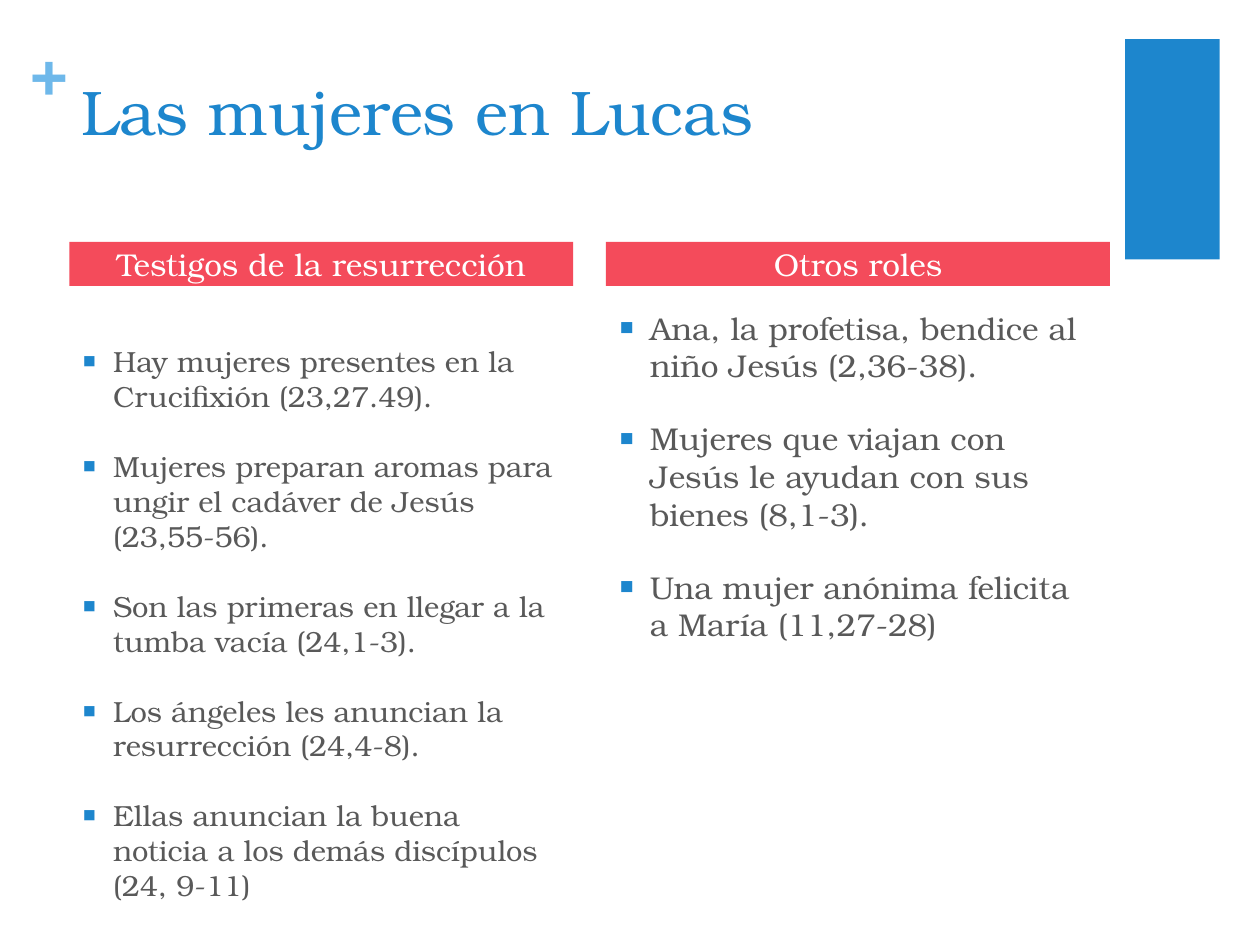
from dataclasses import dataclass

from lxml import etree
from pptx import Presentation
from pptx import util as u
from pptx.dml.color import RGBColor
from pptx.enum import shapes, text
from pptx.oxml import ns


@dataclass(frozen=True)
class Theme:
    font: str = "TeX Gyre Bonum"
    blue: str = "1D86CD"
    light: str = "6EB8EA"
    red: str = "F44B5B"
    gray: str = "595959"
    white: str = "FFFFFF"
    large: float = 36
    base: float = 18
    small: float = 16.6
    gap: float = 20


THEME = Theme()

WITNESS = [
    "Hay mujeres presentes en la Crucifixión (23,27.49).",
    "Mujeres preparan aromas para ungir el cadáver de Jesús (23,55-56).",
    "Son las primeras en llegar a la tumba vacía (24,1-3).",
    "Los ángeles les anuncian la resurrección (24,4-8).",
    "Ellas anuncian la buena noticia a los demás discípulos (24, 9-11)",
]
ROLES = [
    "Ana, la profetisa, bendice al niño Jesús (2,36-38).",
    "Mujeres que viajan con Jesús le ayudan con sus bienes (8,1-3).",
    "Una mujer anónima felicita a María (11,27-28)",
]


def apply(item, values):
    for name, value in values.items():
        setattr(item, name, value)


def style(para, size, color, bold=False):
    apply(para.font, {"name": THEME.font, "size": u.Pt(size), "bold": bold})
    para.font.color.rgb = RGBColor.from_string(color)


def add_block(slide, box, fill):
    block = slide.shapes.add_shape(
        shapes.MSO_SHAPE.RECTANGLE, *map(u.Inches, box))
    block.shadow.inherit = False
    block.fill.solid()
    block.fill.fore_color.rgb = RGBColor.from_string(fill)
    block.line.fill.background()
    return block


def add_label(slide, box, words, size, color, **frame):
    label = slide.shapes.add_textbox(*map(u.Inches, box)).text_frame
    apply(label, {"word_wrap": True, **frame})
    label.text = words
    style(label.paragraphs[0], size, color)
    return label


def add_head(slide, box, words):
    frame = add_block(slide, box, THEME.red).text_frame
    apply(frame, {
        "word_wrap": True,
        "margin_top": 0,
        "margin_bottom": 0,
        "vertical_anchor": text.MSO_ANCHOR.MIDDLE,
    })
    frame.text = words
    para = frame.paragraphs[0]
    para.alignment = text.PP_ALIGN.CENTER
    style(para, THEME.base, THEME.white)


def add_mark(para):
    props = para._p.get_or_add_pPr()
    apply_indent = {"marL": u.Inches(0.25), "indent": u.Inches(-0.25)}
    for name, value in apply_indent.items():
        props.set(name, str(int(value)))
    color = etree.SubElement(props, ns.qn("a:buClr"))
    etree.SubElement(color, ns.qn("a:srgbClr"), val=THEME.blue)
    etree.SubElement(props, ns.qn("a:buSzPct"), val="75000")
    etree.SubElement(props, ns.qn("a:buFont"), typeface=THEME.font)
    etree.SubElement(props, ns.qn("a:buChar"), char="■")


def add_list(slide, box, items, size):
    frame = slide.shapes.add_textbox(*map(u.Inches, box)).text_frame
    frame.word_wrap = True
    for index, item in enumerate(items):
        para = frame.add_paragraph() if index else frame.paragraphs[0]
        para.text = item
        add_mark(para)
        if index:
            para.space_before = u.Pt(THEME.gap)
        style(para, size, THEME.gray)


def main():
    deck = Presentation()
    apply(deck, {"slide_width": u.Inches(10), "slide_height": u.Inches(7.5)})
    slide = deck.slides.add_slide(deck.slide_layouts[6])

    # Corner block and plus sign
    add_block(slide, (8.93, 0.31, 0.75, 1.75), THEME.blue)
    plus = add_label(slide, (0.24, 0.25, 0.29, 0.61), "+",
                     THEME.large, THEME.light, word_wrap=False,
                     margin_left=0, margin_right=0,
                     margin_top=0, margin_bottom=0)
    plus.paragraphs[0].font.bold = True

    # Title
    add_label(slide, (0.55, 0.53, 8.26, 1.22), "Las mujeres en Lucas",
              THEME.large, THEME.blue)

    # Two columns, each with a heading and a list ending at one base line
    width, base = 4, 6.7
    columns = [
        (0.55, 2.68, "Testigos de la resurrección", WITNESS, THEME.small),
        (4.81, 2.4, "Otros roles", ROLES, THEME.base),
    ]
    for left, top, head, items, size in columns:
        add_head(slide, (left, 1.92, width, 0.35), head)
        add_list(slide, (left, top, width, base - top), items, size)

    deck.save("out.pptx")


if __name__ == "__main__":
    main()
